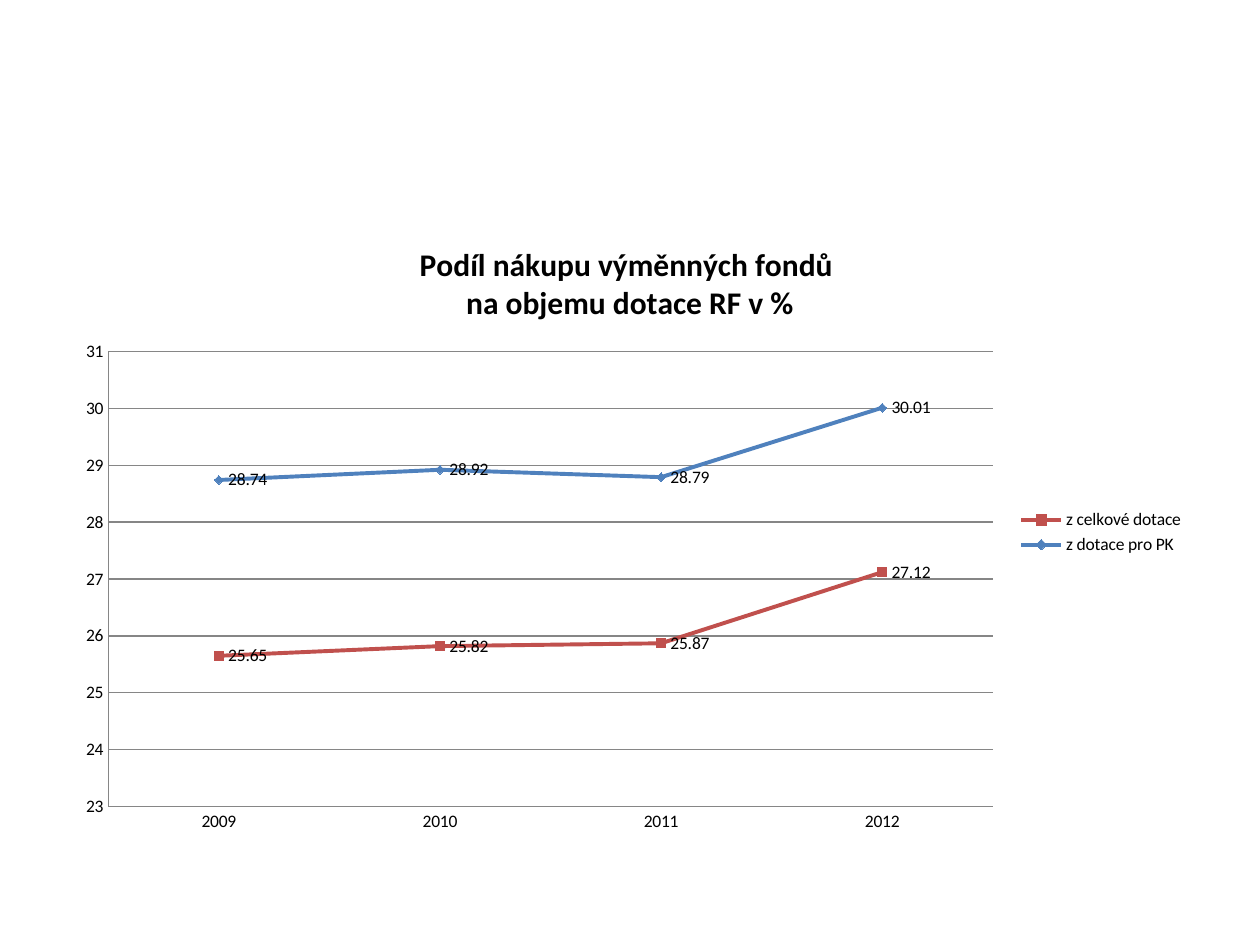
from dataclasses import dataclass

from lxml import etree
from pptx import Presentation
from pptx.chart.data import CategoryChartData
from pptx.dml.color import RGBColor
from pptx.enum import chart as kinds
from pptx.oxml import ns
from pptx.util import Inches, Pt

WIDTH, HEIGHT = Inches(10), Inches(7.5)
FONT, BLACK, GREY = "Calibri", "000000", "868686"
YEARS = ("2009", "2010", "2011", "2012")
TITLE = ("Podíl nákupu výměnných fondů ", "na objemu dotace RF v %")


@dataclass(frozen=True)
class Share:
    name: str
    values: tuple[float, ...]
    colour: str
    marker: kinds.XL_MARKER_STYLE


SHARES = (
    Share("z celkové dotace", (25.65, 25.82, 25.87, 27.12), "C0504D", kinds.XL_MARKER_STYLE.SQUARE),
    Share("z dotace pro PK", (28.74, 28.92, 28.79, 30.01), "4F81BD", kinds.XL_MARKER_STYLE.DIAMOND),
)


def assign(target, values: dict) -> None:
    for name, value in values.items():
        setattr(target, name, value)


def rgb(colour: str) -> RGBColor:
    return RGBColor.from_string(colour)


def style_font(font, size: float, bold: bool = False) -> None:
    assign(font, {"name": FONT, "size": Pt(size), "bold": bold})
    font.color.rgb = rgb(BLACK)


def style_line(line, colour: str, width: float) -> None:
    line.color.rgb = rgb(colour)
    line.width = Pt(width)


def add_title(chart) -> None:
    frame = chart.chart_title.text_frame
    for index, wording in enumerate(TITLE):
        para = frame.add_paragraph() if index else frame.paragraphs[0]
        span = para.add_run()
        span.text = wording
        style_font(span.font, 18, True)
    chart.chart_title.include_in_layout = False


def place_plot(chart, left: float, top: float, width: float, height: float) -> None:
    area = chart.plots[0]._element.getparent()
    for old in area.findall(ns.qn("c:layout")):
        area.remove(old)
    layout = etree.Element(ns.qn("c:layout"))
    manual = etree.SubElement(layout, ns.qn("c:manualLayout"))
    settings = {"layoutTarget": "inner", "xMode": "edge", "yMode": "edge",
                "x": left, "y": top, "w": width, "h": height}
    for tag, value in settings.items():
        etree.SubElement(manual, ns.qn(f"c:{tag}")).set("val", str(value))
    area.insert(0, layout)


def style_series(series, share: Share) -> None:
    series.smooth = False
    style_line(series.format.line, share.colour, 2.25)
    assign(series.marker, {"style": share.marker, "size": 5})
    series.marker.format.fill.solid()
    series.marker.format.fill.fore_color.rgb = rgb(share.colour)
    style_line(series.marker.format.line, share.colour, 0.75)
    labels = series.data_labels
    assign(labels, {"show_value": True, "position": kinds.XL_LABEL_POSITION.RIGHT})
    style_font(labels.font, 10)


def add_share_chart(page) -> None:
    data = CategoryChartData(number_format="General")
    data.categories = YEARS
    for share in SHARES:
        data.add_series(share.name, share.values)
    chart = page.shapes.add_chart(
        kinds.XL_CHART_TYPE.LINE_MARKERS, int(WIDTH * 0.05), Inches(1.75),
        int(WIDTH * 0.9), int(HEIGHT * 0.66), data).chart
    style_font(chart.font, 10)
    add_title(chart)
    chart.has_legend = True
    assign(chart.legend, {"position": kinds.XL_LEGEND_POSITION.RIGHT, "include_in_layout": False})
    style_font(chart.legend.font, 10)
    for axis in (chart.category_axis, chart.value_axis):
        assign(axis, {"major_tick_mark": kinds.XL_TICK_MARK.NONE,
                      "minor_tick_mark": kinds.XL_TICK_MARK.NONE})
        style_font(axis.tick_labels.font, 10)
        style_line(axis.format.line, GREY, 0.75)
    assign(chart.value_axis, {"minimum_scale": 23, "maximum_scale": 31, "major_unit": 1,
                              "has_major_gridlines": True})
    style_line(chart.value_axis.major_gridlines.format.line, GREY, 0.75)
    chart.plots[0].vary_by_categories = False
    for series, share in zip(chart.plots[0].series, SHARES):
        style_series(series, share)
    place_plot(chart, 0.04, 0.21, 0.78, 0.73)


def main() -> None:
    deck = Presentation()
    assign(deck, {"slide_width": WIDTH, "slide_height": HEIGHT})
    page = deck.slides.add_slide(deck.slide_layouts[6])
    add_share_chart(page)
    deck.save("out.pptx")


if __name__ == "__main__":
    main()
